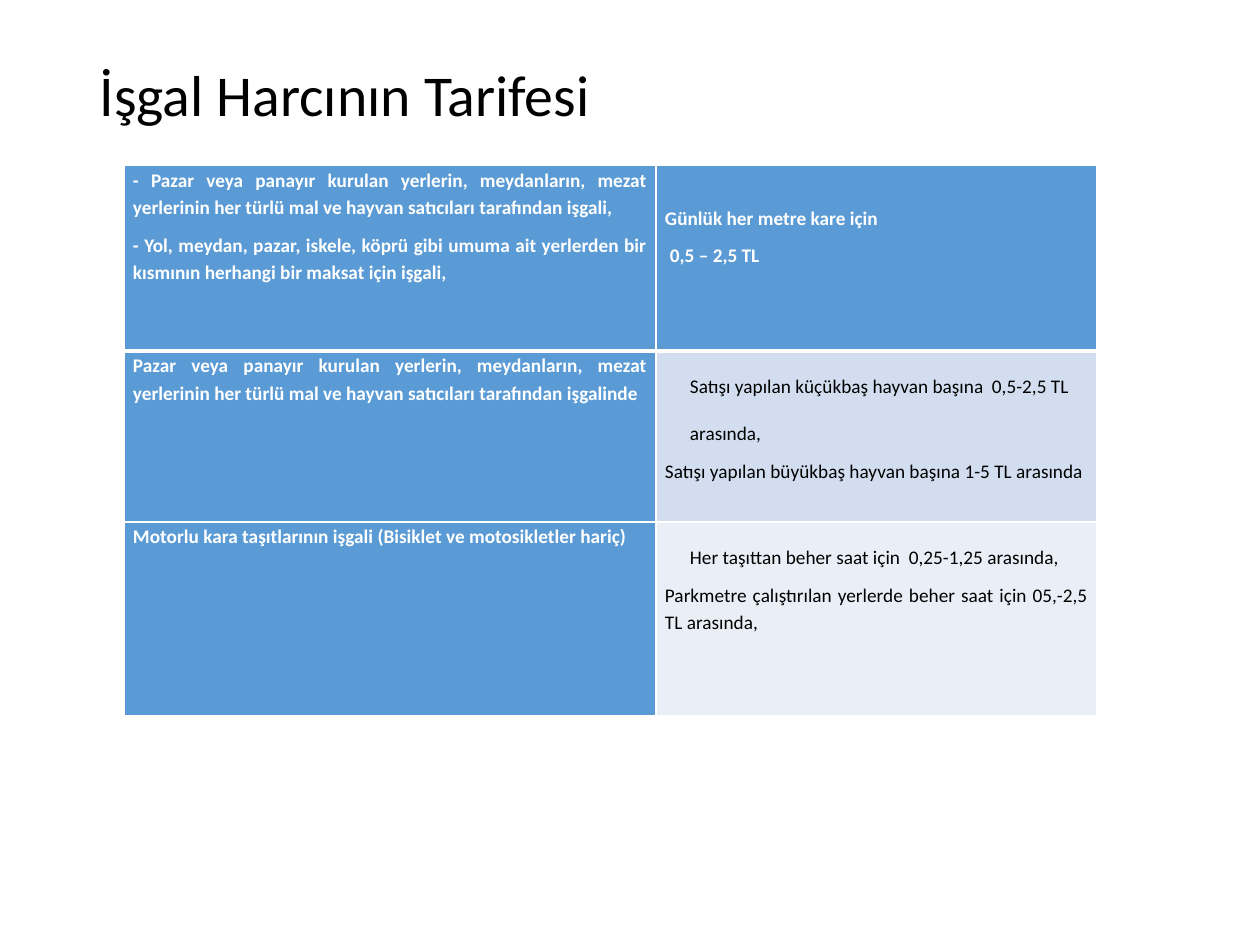
from dataclasses import dataclass

from lxml.etree import SubElement
from pptx import Presentation
from pptx.dml.color import RGBColor
from pptx.enum.text import MSO_ANCHOR, MSO_AUTO_SIZE, PP_ALIGN
from pptx.oxml.ns import qn
from pptx.util import Pt


@dataclass(frozen=True)
class Theme:
    font: str = "Calibri"
    head: int = 33
    body: int = 11
    ink: str = "000000"
    white: str = "FFFFFF"
    blue: str = "5B9BD5"
    pale: str = "D2DEEF"
    light: str = "EAEFF7"


@dataclass(frozen=True)
class Para:
    text: str
    indent: int = 0
    lead: float = 1.15
    align: PP_ALIGN = PP_ALIGN.JUSTIFY


THEME = Theme()
PAD = 9
COLS = (532, 441)
ROWS = (186, 171, 194)


def px(num):
    return round(num * 914400 / 126)


def loose(text):
    return Para(text, 25, 2.0, PP_ALIGN.LEFT)


def style(para, size, color, bold=False):
    for run in para.runs:
        font = run.font
        font.name, font.size, font.bold = THEME.font, Pt(size), bold
        font.color.rgb = RGBColor.from_string(color)


def add_title(slide, text):
    title = slide.shapes.title
    title.left, title.top, title.width, title.height = map(px, (87, 50, 1086, 95))
    frame = title.text_frame
    frame.text = text
    frame.auto_size = MSO_AUTO_SIZE.NONE
    frame.vertical_anchor = MSO_ANCHOR.MIDDLE
    para = frame.paragraphs[0]
    para.alignment, para.line_spacing = PP_ALIGN.LEFT, 0.9
    style(para, THEME.head, THEME.ink)


def add_edges(cell, widths):
    """Draw white borders; widths in points for left, right, top, bottom."""
    props = cell._tc.get_or_add_tcPr()
    for side, width in zip("LRTB", widths):
        line = SubElement(props, qn(f"a:ln{side}"), w=str(Pt(width)))
        fill = SubElement(line, qn("a:solidFill"))
        SubElement(fill, qn("a:srgbClr"), val=THEME.white)


def fill_cell(cell, paras, back, color, bold, top=0):
    cell.margin_left = cell.margin_right = px(PAD)
    cell.margin_top, cell.margin_bottom = px(top), 0
    cell.fill.solid()
    cell.fill.fore_color.rgb = RGBColor.from_string(back)
    frame = cell.text_frame
    frame.text = "\n".join(item.text for item in paras)
    for para, item in zip(frame.paragraphs, paras):
        para.alignment, para.line_spacing = item.align, item.lead
        para.space_before = Pt(6)
        if item.indent:
            props = para._p.get_or_add_pPr()
            props.set("marL", str(px(item.indent)))
            props.set("indent", "0")
        style(para, THEME.body, color, bold)


def add_rates(slide, rows):
    size = len(rows), len(COLS)
    box = map(px, (124, 165, sum(COLS), sum(ROWS)))
    table = slide.shapes.add_table(*size, *box).table
    for col, width in zip(table.columns, COLS):
        col.width = px(width)
    for idx, (row, height) in enumerate(zip(table.rows, ROWS)):
        row.height = px(height)
        above, below = (3 if idx == 1 else 1), (3 if idx == 0 else 1)
        for cell in row.cells:
            add_edges(cell, (1, 1, above, below))
        use, rate, back = rows[idx]
        fill_cell(row.cells[0], use, THEME.blue, THEME.white, True)
        first = idx == 0
        fill_cell(row.cells[1], rate, back, THEME.white if first else THEME.ink,
                  first, 38 if first else 0)


def main():
    deck = Presentation()
    deck.slide_width, deck.slide_height = px(1260), px(945)
    slide = deck.slides.add_slide(deck.slide_layouts[5])
    add_title(slide, "İşgal Harcının Tarifesi")
    add_rates(slide, (
        ((Para("- Pazar veya panayır kurulan yerlerin, meydanların, mezat "
               "yerlerinin her türlü mal ve hayvan satıcıları tarafından işgali,"),
          Para("- Yol, meydan, pazar, iskele, köprü gibi umuma ait yerlerden bir "
               "kısmının herhangi bir maksat için işgali,")),
         (Para("Günlük her metre kare için"), Para("0,5 – 2,5 TL", 5)),
         THEME.blue),
        ((Para("Pazar veya panayır kurulan yerlerin, meydanların, mezat "
               "yerlerinin her türlü mal ve hayvan satıcıları tarafından işgalinde"),),
         (loose("Satışı yapılan küçükbaş hayvan başına  0,5-2,5 TL arasında,"),
          Para("Satışı yapılan büyükbaş hayvan başına 1-5 TL arasında")),
         THEME.pale),
        ((Para("Motorlu kara taşıtlarının işgali (Bisiklet ve motosikletler hariç)"),),
         (loose("Her taşıttan beher saat için  0,25-1,25 arasında,"),
          Para("Parkmetre çalıştırılan yerlerde beher saat için 05,-2,5 TL arasında,")),
         THEME.light),
    ))
    deck.save("out.pptx")


if __name__ == "__main__":
    main()
